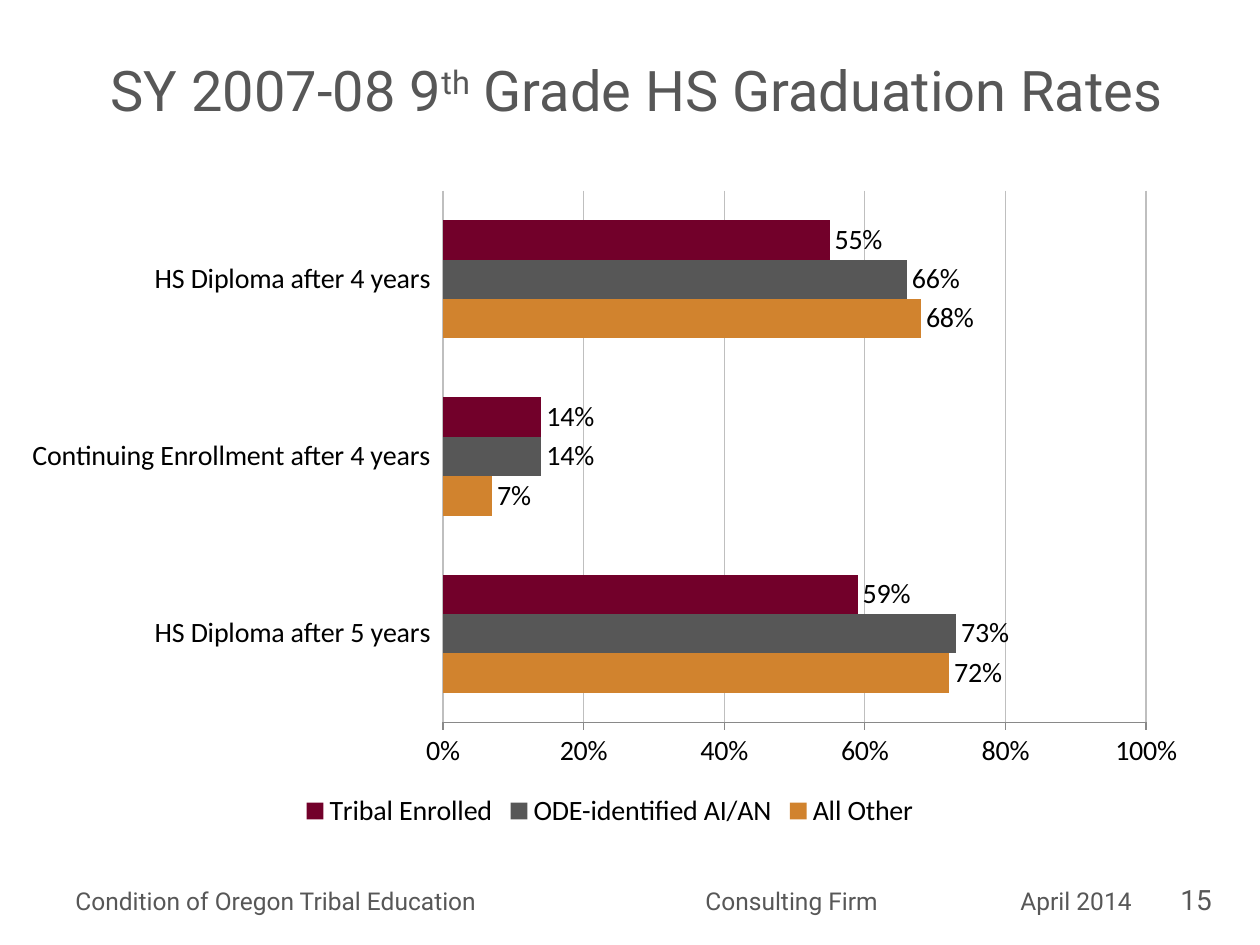
from pptx import Presentation
from pptx.chart.data import CategoryChartData
from pptx.dml.color import RGBColor
from pptx.enum.chart import XL_CHART_TYPE as CT, XL_LABEL_POSITION as LP
from pptx.enum.chart import XL_LEGEND_POSITION as LG, XL_TICK_MARK as TM
from pptx.enum.text import MSO_ANCHOR as MA, PP_ALIGN as PA
from pptx.oxml import parse_xml
from pptx.oxml.ns import nsdecls
from pptx.util import Pt

COLORS = {"text": "575757", "black": "000000", "grid": "BFBFBF", "axis": "898989",
          "other": "D1832E", "ode": "575757", "tribal": "72002A"}


def rgb(name):
    return RGBColor.from_string(COLORS[name])


class Deck:
    head_font, chart_font = "Roboto", "Calibri"

    def __init__(self, prs):
        self.s = prs.slides.add_slide(prs.slide_layouts[5])

    def set_font(self, font, size, name=head_font, color="text"):
        for key, value in {"size": Pt(size), "name": name, "bold": False}.items():
            setattr(font, key, value)
        font.color.rgb = rgb(color)

    def title(self, parts, left, top, width, height):
        sp = self.s.shapes.title
        box = {"left": left, "top": top, "width": width, "height": height}
        for key, value in box.items():
            setattr(sp, key, Pt(value))
        tf = sp.text_frame
        tf.vertical_anchor = MA.MIDDLE
        p = tf.paragraphs[0]
        p.alignment = PA.CENTER
        for text, raised in parts:
            r = p.add_run()
            r.text = text
            self.set_font(r.font, 32)
            if raised:
                r._r.get_or_add_rPr().set("baseline", "30000")

    def text(self, text, size, left, top, width, height, tabs=()):
        sp = self.s.shapes.add_textbox(Pt(left), Pt(top), Pt(width), Pt(height))
        tf = sp.text_frame
        tf.word_wrap = True
        p = tf.paragraphs[0]
        r = p.add_run()
        r.text = text
        self.set_font(r.font, size)
        if tabs:
            stops = "".join(f'<a:tab pos="{Pt(t)}" algn="l"/>' for t in tabs)
            p._p.get_or_add_pPr().append(
                parse_xml(f'<a:tabLst {nsdecls("a")}>{stops}</a:tabLst>'))

    def bar_chart(self, cats, series, left, top, width, height, plot):
        data = CategoryChartData(number_format="0%")
        data.categories = cats
        for name, values, _ in series:
            data.add_series(name, values)
        chart = self.s.shapes.add_chart(CT.BAR_CLUSTERED, Pt(left), Pt(top),
                                        Pt(width), Pt(height), data).chart
        self.set_font(chart.font, 16, self.chart_font, "black")
        chart.has_title = False
        chart.has_legend = True
        for key, value in {"position": LG.BOTTOM, "include_in_layout": False}.items():
            setattr(chart.legend, key, value)

        bars = chart.plots[0]
        for key, value in {"gap_width": 150, "overlap": 0,
                           "vary_by_categories": False}.items():
            setattr(bars, key, value)
        for ser, (_, _, color) in zip(bars.series, series):
            ser.format.fill.solid()
            ser.format.fill.fore_color.rgb = rgb(color)
            labels = ser.data_labels
            for key, value in {"show_value": True, "position": LP.OUTSIDE_END,
                               "number_format": "0%",
                               "number_format_is_linked": False}.items():
                setattr(labels, key, value)

        cat, val = chart.category_axis, chart.value_axis
        cat.major_tick_mark = TM.OUTSIDE
        cat.format.line.fill.background()
        for key, value in {"minimum_scale": 0, "maximum_scale": 1, "major_unit": 0.2,
                           "major_tick_mark": TM.OUTSIDE,
                           "has_major_gridlines": True}.items():
            setattr(val, key, value)
        val.tick_labels.number_format = "0%"
        val.tick_labels.number_format_is_linked = False
        for part, color in ((val, "axis"), (val.major_gridlines, "grid")):
            part.format.line.color.rgb = rgb(color)
            part.format.line.width = Pt(0.75)
        self.place_plot(chart, plot)

    def place_plot(self, chart, plot):
        area = chart._chartSpace.chart.plotArea
        for old in area.findall(area.tag.replace("plotArea", "layout")):
            area.remove(old)
        modes = '<c:xMode val="edge"/><c:yMode val="edge"/>'
        sizes = "".join(f'<c:{k} val="{v}"/>' for k, v in zip("xywh", plot))
        area.insert(0, parse_xml(
            f'<c:layout {nsdecls("c")}><c:manualLayout><c:layoutTarget val="inner"/>'
            f'{modes}{sizes}</c:manualLayout></c:layout>'))


def main():
    prs = Presentation()
    prs.slide_width, prs.slide_height = Pt(720), Pt(540)
    deck = Deck(prs)
    deck.text("15", 16, 667.5, 501, 50.5, 27)
    deck.text("Condition of Oregon Tribal Education\tConsulting Firm\tApril 2014",
              14, 36, 503, 631.5, 24.5, tabs=(360, 540))
    deck.title([("SY 2007-08 9", False), ("th", True),
                (" Grade HS Graduation Rates", False)], 23, 15, 682, 71.5)
    deck.bar_chart(
        ["HS Diploma after 5 years", "Continuing Enrollment after 4 years",
         "HS Diploma after 4 years"],
        [("All Other", (0.72, 0.07, 0.68), "other"),
         ("ODE-identified AI/AN", (0.73, 0.14, 0.66), "ode"),
         ("Tribal Enrolled", (0.59, 0.14, 0.55), "tribal")],
        8, 101.5, 681, 375, plot=(0.36, 0.02, 0.59, 0.81))
    prs.save("out.pptx")


if __name__ == "__main__":
    main()
